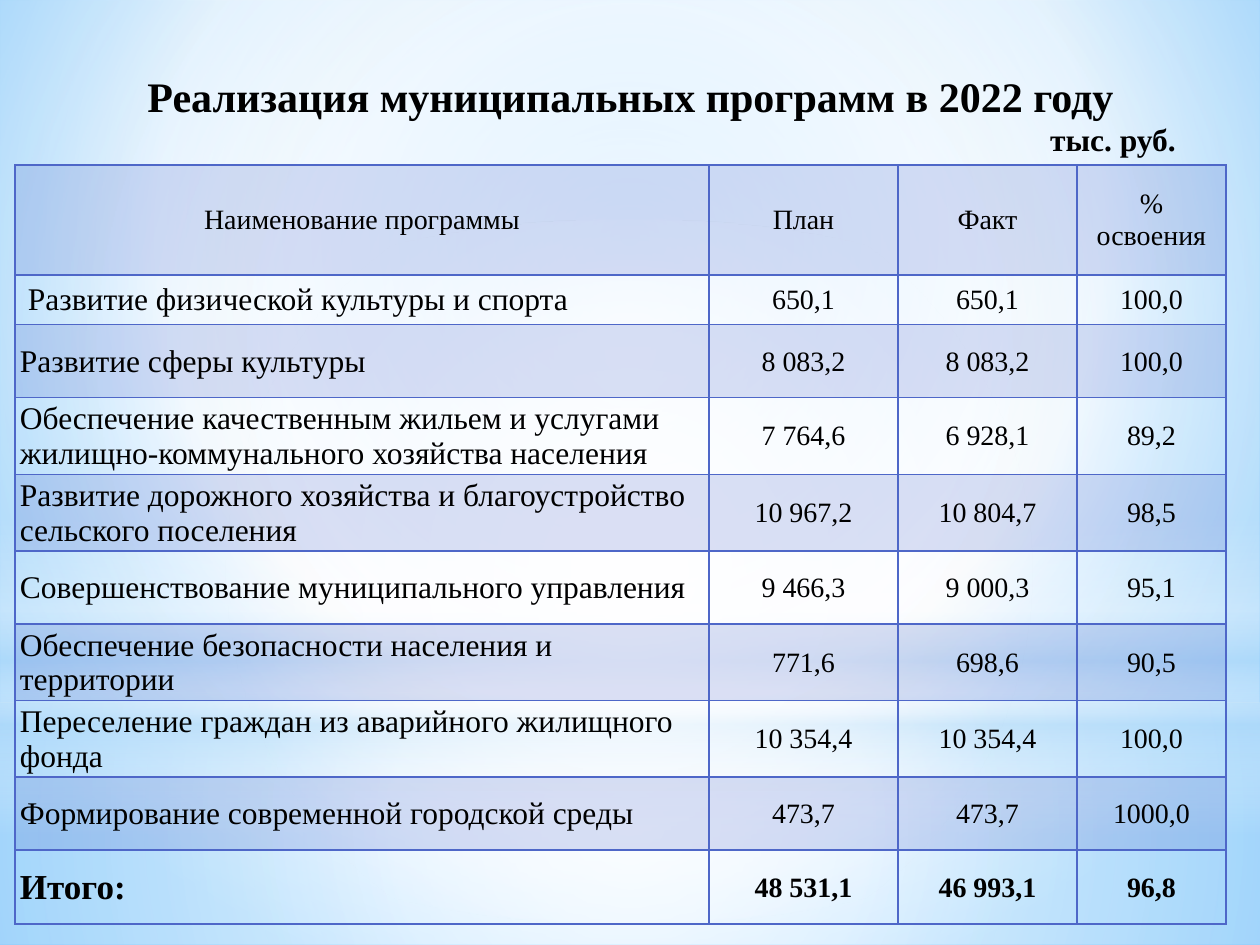
from lxml import etree
from pptx import Presentation
from pptx import util as u
from pptx.dml.color import RGBColor
from pptx.enum import shapes, text
from pptx.oxml.ns import qn

SCALE = 914400 / 126
FONT = "Times New Roman"
BLUE, PALE, WHITE, BLACK = "4E67C8", "B4DCFA", "FFFFFF", "000000"
CENTRE = (50, 50, 50, 50)
COLUMNS = (694, 189, 179, 149)
ROWS = (110, 48) + (73,) * 7 + (74,)
PROGRAMMES = (
    ("Наименование программы", "План", "Факт", "% освоения"),
    ("Развитие физической культуры и спорта", "650,1", "650,1", "100,0"),
    ("Развитие сферы культуры", "8 083,2", "8 083,2", "100,0"),
    ("Обеспечение качественным жильем и услугами жилищно-коммунального хозяйства населения",
     "7 764,6", "6 928,1", "89,2"),
    ("Развитие дорожного хозяйства и благоустройство сельского поселения",
     "10 967,2", "10 804,7", "98,5"),
    ("Совершенствование муниципального управления", "9 466,3", "9 000,3", "95,1"),
    ("Обеспечение безопасности населения и территории", "771,6", "698,6", "90,5"),
    ("Переселение граждан из аварийного жилищного фонда", "10 354,4", "10 354,4", "100,0"),
    ("Формирование современной городской среды", "473,7", "473,7", "1000,0"),
    ("Итого:", "48 531,1", "46 993,1", "96,8"),
)


def px(length):
    """Turn pixels into EMU."""
    return u.Emu(round(length * SCALE))


def colour(value):
    """Turn a hex string into a colour."""
    return RGBColor.from_string(value)


def add_node(parent, tag, **attributes):
    """Append an XML element with the given attributes."""
    node = etree.SubElement(parent, qn(tag))
    for name, value in attributes.items():
        node.set(name, str(value))
    return node


def add_alpha(node, percent):
    """Give a colour element its opacity."""
    add_node(node, "a:alpha", val=percent * 1000)


def set_gradient(fill, owner, stops, centre=None):
    """Fill with a circular gradient, or a vertical one without a centre."""
    fill.gradient()
    gradient = next(owner.iter(qn("a:gradFill")))
    for child in list(gradient):
        gradient.remove(child)
    stop_list = add_node(gradient, "a:gsLst")
    for position, value, opacity in stops:
        stop = add_node(stop_list, "a:gs", pos=position * 1000)
        add_alpha(add_node(stop, "a:srgbClr", val=value), opacity)
    if centre:
        circle = add_node(gradient, "a:path", path="circle")
        sides = {side: part * 1000 for side, part in zip("ltrb", centre)}
        add_node(circle, "a:fillToRect", **sides)
    else:
        add_node(gradient, "a:lin", ang=5400000, scaled=0)


def add_glow(page, kind, top, height, stops, centre=None):
    """Add a full-width translucent gradient shape."""
    glow = page.shapes.add_shape(kind, 0, px(top), px(1260), px(height))
    glow.shadow.inherit = False
    glow.line.fill.background()
    set_gradient(glow.fill, glow._element.spPr, stops, centre)


def add_backdrop(page):
    """Paint the background and its layers of light."""
    set_gradient(page.background.fill, page._element,
                 ((0, "9ED5FF", 100), (60, WHITE, 100), (100, "5BB9FF", 100)),
                 (20, 10, 20, 60))
    rectangle, oval = shapes.MSO_SHAPE.RECTANGLE, shapes.MSO_SHAPE.OVAL
    add_glow(page, rectangle, 703, 242,
             ((0, WHITE, 91), (37, WHITE, 76), (100, PALE, 79)), CENTRE)
    add_glow(page, rectangle, 0, 703,
             ((0, WHITE, 89), (48, WHITE, 62), (100, PALE, 79)), CENTRE)
    add_glow(page, rectangle, 519, 315,
             ((0, WHITE, 0), (29, WHITE, 30), (45, PALE, 40),
              (55, WHITE, 26), (65, PALE, 60), (100, WHITE, 0)))
    add_glow(page, oval, 220, 703, ((0, WHITE, 100), (56, WHITE, 0)), CENTRE)


def write(para, words, size, bold=False, align=text.PP_ALIGN.CENTER):
    """Write one formatted run into a paragraph."""
    para.alignment = align
    span = para.add_run()
    span.text = words
    span.font.name = FONT
    span.font.size = u.Pt(size)
    span.font.bold = bold
    span.font.color.rgb = colour(BLACK)


def add_title(page):
    """Add the title with the unit beneath it."""
    box = page.shapes.add_textbox(px(69), px(59), px(1123), px(59))
    frame = box.text_frame
    frame.word_wrap = True
    frame.margin_left = frame.margin_right = px(16)
    frame.margin_top, frame.margin_bottom = px(11), 0
    write(frame.paragraphs[0], "Реализация муниципальных программ в 2022 году", 24, bold=True)
    write(frame.add_paragraph(), "тыс. руб.", 18, bold=True, align=text.PP_ALIGN.RIGHT)


def set_borders(cell):
    """Draw a thin blue line on each side of a cell."""
    properties = cell._tc.get_or_add_tcPr()
    for place, side in enumerate("LRTB"):
        line = add_node(properties, f"a:ln{side}", w=u.Pt(1))
        add_node(add_node(line, "a:solidFill"), "a:srgbClr", val=BLUE)
        properties.insert(place, line)


def set_cell_fill(cell, shaded):
    """Tint a shaded cell and leave the others clear."""
    if not shaded:
        cell.fill.background()
        return
    cell.fill.solid()
    cell.fill.fore_color.rgb = colour(BLUE)
    add_alpha(next(cell._tc.tcPr.iter(qn("a:srgbClr"))), 20)


def fill_cell(cell, words, row, column):
    """Write and format one table cell by its place."""
    is_name = column == 0
    total = row == len(ROWS) - 1
    if row < 2:
        margins = (13, 6, 13, 6)
    else:
        margins = (5 if is_name else 1, 1, 1, 0)
    cell.margin_left, cell.margin_top, cell.margin_right, cell.margin_bottom = map(px, margins)
    cell.vertical_anchor = text.MSO_ANCHOR.MIDDLE
    size, align = 16, text.PP_ALIGN.CENTER
    if is_name and row:
        size, align = 20 if total else 18, text.PP_ALIGN.LEFT
    write(cell.text_frame.paragraphs[0], words, size, total, align)
    set_cell_fill(cell, row % 2 == 0)
    set_borders(cell)


def add_programme_table(page):
    """Add the table of programmes."""
    table = page.shapes.add_table(len(ROWS), len(COLUMNS), px(15), px(165),
                                  px(sum(COLUMNS)), px(sum(ROWS))).table
    table.first_row = table.horz_banding = False
    for column, width in zip(table.columns, COLUMNS):
        column.width = px(width)
    for row, height in zip(table.rows, ROWS):
        row.height = px(height)
    for row, values in enumerate(PROGRAMMES):
        for column, words in enumerate(values):
            fill_cell(table.cell(row, column), words, row, column)


def main():
    """Build and save the slide."""
    deck = Presentation()
    deck.slide_width, deck.slide_height = px(1260), px(945)
    page = deck.slides.add_slide(deck.slide_layouts[6])
    add_backdrop(page)
    add_title(page)
    add_programme_table(page)
    deck.save("out.pptx")


if __name__ == "__main__":
    main()
